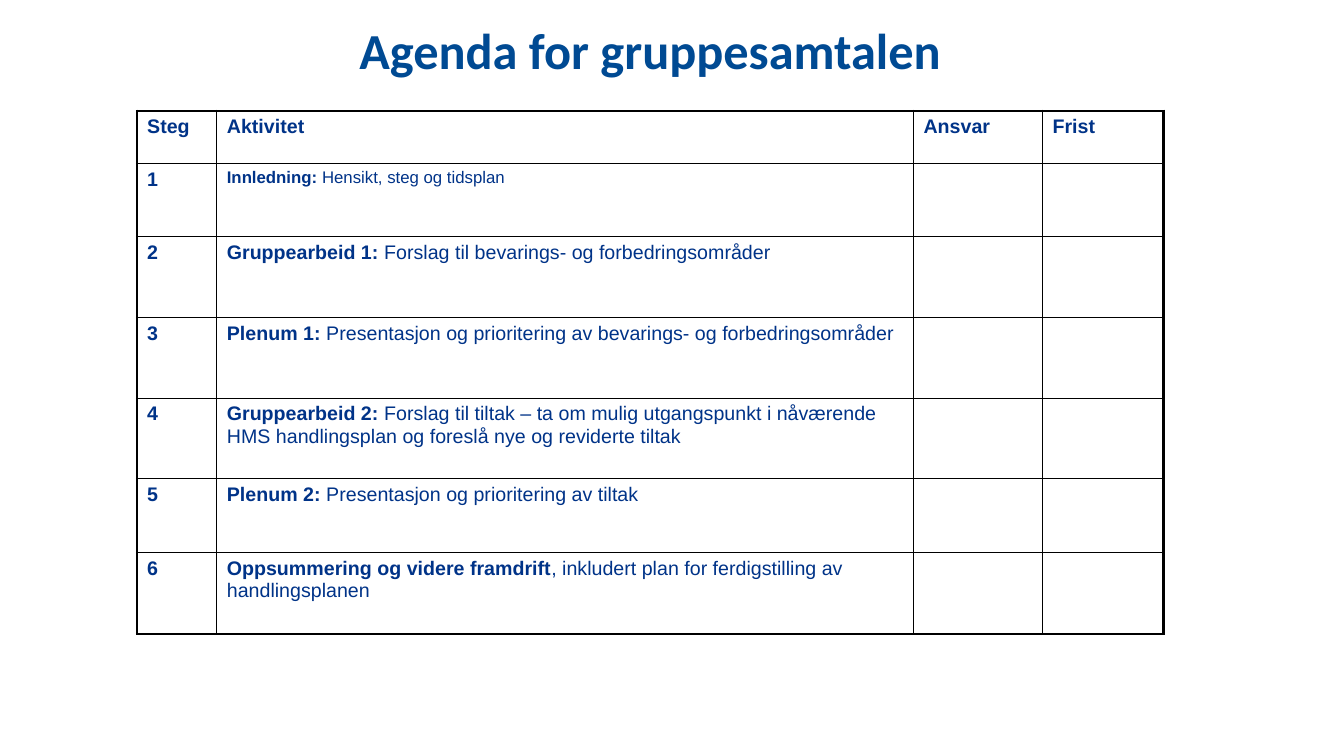
from dataclasses import dataclass

from lxml.etree import SubElement
from pptx import Presentation
from pptx.dml.color import RGBColor
from pptx.enum.text import MSO_ANCHOR, PP_ALIGN
from pptx.oxml.ns import qn
from pptx.util import Inches, Length, Pt

NAVY = RGBColor(0x00, 0x33, 0x88)
BLUE = RGBColor(0x00, 0x4A, 0x93)
BLACK = RGBColor(0x00, 0x00, 0x00)

WIDTH = Inches(13.33)
HEIGHT = Inches(7.5)
THIN = 1
THICK = 2.25


@dataclass
class Step:
    lead: str
    rest: str
    high: float
    size: int = 14


HEADS = ["Steg", "Aktivitet", "Ansvar", "Frist"]
WIDTHS = [5.93, 51.84, 9.6, 9]
HEAD_HIGH = 6.93
STEPS = [
    Step("Innledning:", " Hensikt, steg og tidsplan", 9.73, 12),
    Step("Gruppearbeid 1:", " Forslag til bevarings- og forbedringsområder", 10.67),
    Step("Plenum 1:", " Presentasjon og prioritering av bevarings- og forbedringsområder", 10.67),
    Step("Gruppearbeid 2:", " Forslag til tiltak – ta om mulig utgangspunkt i nåværende "
         "HMS handlingsplan og foreslå nye og reviderte tiltak", 10.67),
    Step("Plenum 2:", " Presentasjon og prioritering av tiltak", 9.73),
    Step("Oppsummering og videre framdrift",
         ", inkludert plan for ferdigstilling av handlingsplanen", 10.8),
]


def across(share: float) -> Length:
    return Length(round(WIDTH * share / 100))


def down(share: float) -> Length:
    return Length(round(HEIGHT * share / 100))


def style(run, face: str, size: int, color: RGBColor, bold: bool = True) -> None:
    font = run.font
    font.name = face
    font.size = Pt(size)
    font.bold = bold
    font.color.rgb = color


def write(cell, lead: str, rest: str = "", size: int = 14) -> None:
    line = cell.text_frame.paragraphs[0]
    line.text = lead
    style(line.runs[0], "Arial", size, NAVY)
    if rest:
        run = line.add_run()
        run.text = rest
        style(run, "Arial", size, NAVY, False)


def border(cell, edges: dict[str, bool]) -> None:
    props = cell._tc.get_or_add_tcPr()
    for side, outer in edges.items():
        width = Pt(THICK if outer else THIN)
        line = SubElement(props, qn(f"a:ln{side}"), w=str(width))
        fill = SubElement(line, qn("a:solidFill"))
        SubElement(fill, qn("a:srgbClr"), val=str(BLACK))


def add_title(slide) -> None:
    title = slide.shapes.title
    title.left, title.top = across(18.68), down(2.8)
    title.width, title.height = across(59.41), down(13.33)
    frame = title.text_frame
    frame.text = "Agenda for gruppesamtalen"
    frame.word_wrap = True
    frame.vertical_anchor = MSO_ANCHOR.TOP
    line = frame.paragraphs[0]
    line.alignment = PP_ALIGN.CENTER
    line.line_spacing = 0.9
    style(line.runs[0], "Calibri", 36, BLUE)


def add_agenda(slide) -> None:
    highs = [HEAD_HIGH] + [step.high for step in STEPS]
    table = slide.shapes.add_table(
        len(highs), len(WIDTHS), across(10.2), down(14.67),
        across(sum(WIDTHS)), down(sum(highs))).table
    table.first_row = False
    table.horz_banding = False
    for col, share in zip(table.columns, WIDTHS):
        col.width = across(share)
    for row, share in zip(table.rows, highs):
        row.height = down(share)

    for col, head in enumerate(HEADS):
        write(table.cell(0, col), head)
    for row, step in enumerate(STEPS, 1):
        write(table.cell(row, 0), str(row))
        write(table.cell(row, 1), step.lead, step.rest, step.size)

    for y in range(len(highs)):
        for x in range(len(WIDTHS)):
            cell = table.cell(y, x)
            border(cell, {"L": x == 0, "R": x == len(WIDTHS) - 1,
                          "T": y == 0, "B": y == len(highs) - 1})
            cell.fill.background()


def main() -> None:
    deck = Presentation()
    deck.slide_width, deck.slide_height = WIDTH, HEIGHT
    slide = deck.slides.add_slide(deck.slide_layouts[5])
    add_title(slide)
    add_agenda(slide)
    deck.save("out.pptx")


if __name__ == "__main__":
    main()
